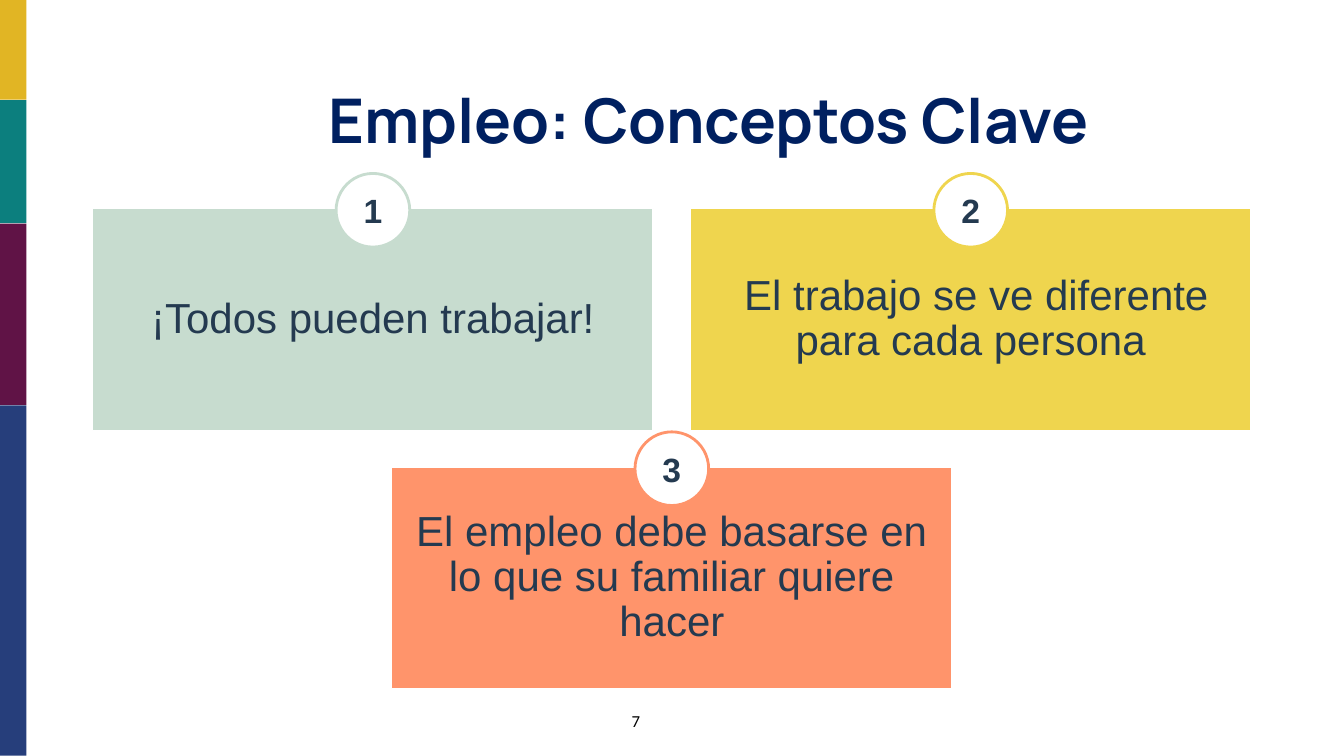
from itertools import pairwise

from pptx import Presentation
from pptx.dml.color import RGBColor
from pptx.enum import shapes, text
from pptx.util import Pt

HUES = {
    "gold": "E1B524", "teal": "0C7F7E", "plum": "601346", "blue": "263E7B",
    "navy": "002060", "ink": "243A50", "black": "000000", "white": "FFFFFF",
    "mint": "C7DCCF", "yellow": "EFD54E", "coral": "FF946B",
}
RECT = shapes.MSO_SHAPE.RECTANGLE
OVAL = shapes.MSO_SHAPE.OVAL


def hue(name):
    return RGBColor.from_string(HUES[name])


def draw(slide, kind, box, fill, line=None, width=1):
    shape = slide.shapes.add_shape(kind, *map(Pt, box))
    shape.shadow.inherit = False
    shape.fill.solid()
    shape.fill.fore_color.rgb = hue(fill)
    if line:
        shape.line.color.rgb = hue(line)
        shape.line.width = Pt(width)
    else:
        shape.line.fill.background()
    return shape


def write(shape, words, size, color, face="Arial", bold=False, space=1.0, inset=0):
    frame = shape.text_frame
    frame.word_wrap = True
    frame.vertical_anchor = text.MSO_ANCHOR.MIDDLE
    frame.margin_left = frame.margin_right = Pt(inset)
    frame.margin_top = frame.margin_bottom = Pt(inset)
    para = frame.paragraphs[0]
    para.text = words
    para.alignment = text.PP_ALIGN.CENTER
    para.line_spacing = space
    font = para.font
    font.name, font.size, font.bold = face, Pt(size), bold
    font.color.rgb = hue(color)


def stripe(slide, left, width):
    """Colour bands down the slide edge."""
    edges = pairwise([0, 71.5, 159.7, 289.6, 540])
    for (top, end), fill in zip(edges, ["gold", "teal", "plum", "blue"]):
        draw(slide, RECT, (left, top, width, end - top - 0.3), fill)


def label(slide, box, words, size, color, **style):
    write(slide.shapes.add_textbox(*map(Pt, box)), words, size, color, **style)


def card(slide, box, number, words, fill):
    """Coloured card with a numbered badge on its top edge."""
    left, top, width, height = box
    panel = draw(slide, RECT, box, fill, "white")
    write(panel, words, 30, "ink", space=0.9, inset=8.64)
    side = 52.6
    spot = (left + (width - side) / 2, top + 1.2 - side / 2, side, side)
    badge = draw(slide, OVAL, spot, "white", fill, 2)
    write(badge, str(number), 24, "ink", bold=True)


def cards(slide, left, top):
    """Two cards above, one centred below."""
    wide, high = 400.2, 158.4
    step, drop = 427, 184.6
    items = [
        (0, 0, "¡Todos pueden trabajar!", "mint"),
        (step, 0, " El trabajo se ve diferente para cada persona", "yellow"),
        (step / 2, drop, "El empleo debe basarse en lo que su familiar quiere hacer", "coral"),
    ]
    for number, (right, down, words, fill) in enumerate(items, 1):
        card(slide, (left + right, top + down, wide, high), number, words, fill)


def main():
    deck = Presentation()
    deck.slide_width, deck.slide_height = Pt(960), Pt(540)
    slide = deck.slides.add_slide(deck.slide_layouts[6])
    stripe(slide, 0, 18.8)
    # Title
    label(slide, (92.2, 36, 828, 104.4), "Empleo: Conceptos Clave", 44, "navy",
          face="Manrope", bold=True, space=0.9)
    cards(slide, 66.3, 149)
    # Page number
    label(slide, (346.3, 500.4, 216, 28.8), "7", 12, "black", face="Calibri")
    deck.save("out.pptx")


if __name__ == "__main__":
    main()
